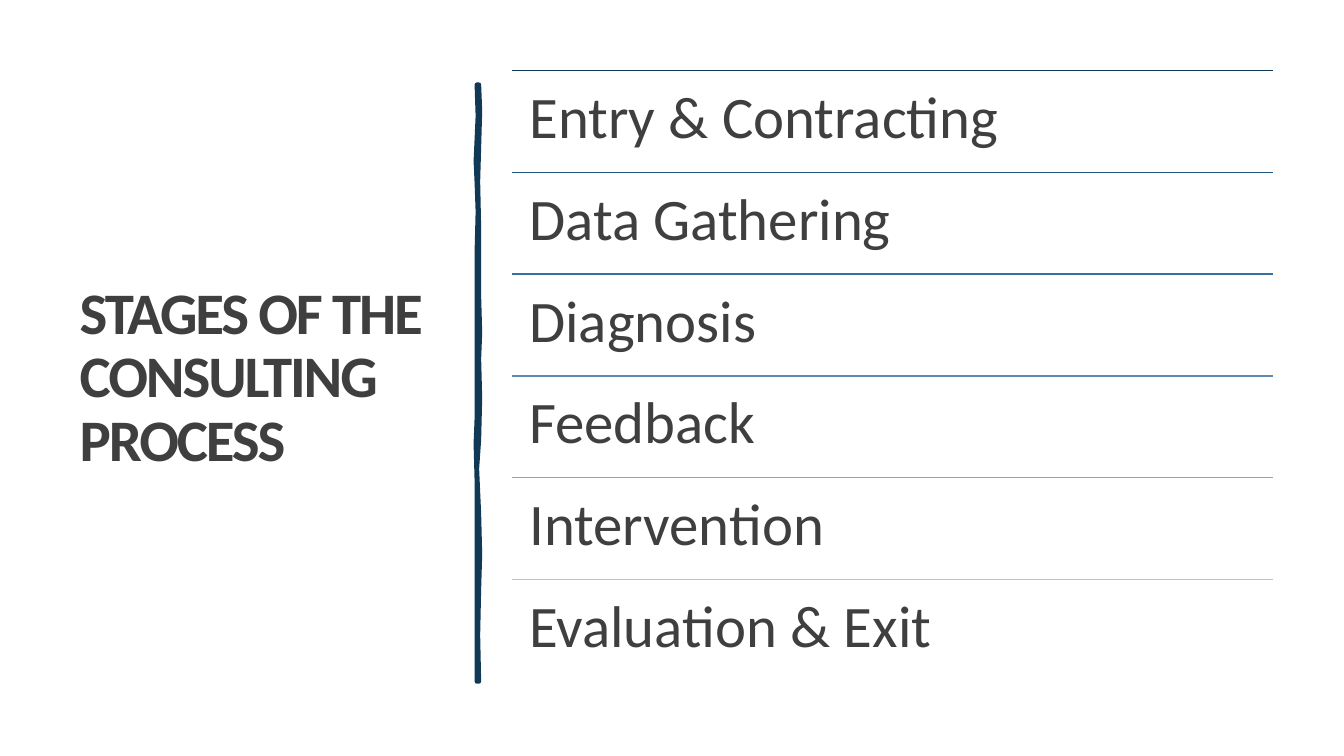
from dataclasses import dataclass

from lxml import etree
from pptx import Presentation
from pptx.dml.color import RGBColor
from pptx.enum import shapes, text
from pptx.oxml.ns import qn
from pptx.util import Inches, Pt

TITLE = "STAGES OF THE CONSULTING PROCESS"
STAGES = [
    ("Entry & Contracting", "0F3955"),
    ("Data Gathering", "20567E"),
    ("Diagnosis", "3870A1"),
    ("Feedback", "5E8AB5"),
    ("Intervention", "90A6BE"),
    ("Evaluation & Exit", "BBC3CD"),
]
BAR_RIGHT = [
    (4.75, 0.84), (4.76, 1.1), (4.75, 1.46), (4.74, 1.8), (4.75, 2.26),
    (4.75, 2.94), (4.76, 3.3), (4.75, 3.56), (4.76, 3.95), (4.75, 4.36),
    (4.73, 4.65), (4.75, 5.1), (4.76, 5.5), (4.75, 5.84), (4.74, 6.3),
    (4.75, 6.76),
]
BAR_LEFT = [
    (4.73, 6.76), (4.73, 6.4), (4.73, 6.13), (4.73, 5.57), (4.73, 4.77),
    (4.72, 4.4), (4.73, 4.15), (4.73, 3.35), (4.73, 2.5), (4.74, 2.1),
    (4.73, 1.81), (4.72, 1.6), (4.74, 1.15), (4.73, 0.84),
]
LIST_LEFT, LIST_TOP, LIST_WIDTH, ROW_HEIGHT = 5.08, 0.7, 7.55, 1.01


@dataclass(frozen=True)
class Theme:
    font: str = "Calibri"
    ink: str = "3F3F3F"
    bar: str = "0F3955"
    size: float = 42
    bar_line: float = 3.25
    rule_line: float = 1
    inset: float = 0.17


THEME = Theme()


def rgb(value):
    return RGBColor.from_string(value)


def write(tf, words, bold=False):
    tf.word_wrap = True
    tf.auto_size = text.MSO_AUTO_SIZE.NONE
    p = tf.paragraphs[0]
    p.alignment = text.PP_ALIGN.LEFT
    p.line_spacing = 0.9
    p.font.name = THEME.font
    p.font.size = Pt(THEME.size)
    p.font.bold = bold
    p.font.color.rgb = rgb(THEME.ink)
    r = p.add_run()
    r.text = words
    return r


def add_title(slide):
    sp = slide.shapes.title
    sp.left, sp.top, sp.width, sp.height = map(Inches, (0.69, 0.7, 3.74, 6.11))
    sp.text_frame.vertical_anchor = text.MSO_ANCHOR.MIDDLE
    r = write(sp.text_frame, TITLE, bold=True)
    r._r.get_or_add_rPr().set("spc", "-150")


def add_bar(slide):
    start, *rest = [(Inches(x), Inches(y)) for x, y in BAR_RIGHT + BAR_LEFT]
    builder = slide.shapes.build_freeform(*start)
    builder.add_line_segments(rest, close=True)
    sp = builder.convert_to_shape()
    sp.shadow.inherit = False
    sp.fill.solid()
    sp.fill.fore_color.rgb = rgb(THEME.bar)
    sp.line.color.rgb = rgb(THEME.bar)
    sp.line.width = Pt(THEME.bar_line)
    etree.SubElement(sp.line._get_or_add_ln(), qn("a:round"))


def add_stage(slide, index, name, color):
    left, width, height = map(Inches, (LIST_LEFT, LIST_WIDTH, ROW_HEIGHT))
    top = Inches(LIST_TOP + index * ROW_HEIGHT)
    rule = slide.shapes.add_connector(
        shapes.MSO_CONNECTOR.STRAIGHT, left, top, left + width, top)
    rule.line.color.rgb = rgb(color)
    rule.line.width = Pt(THEME.rule_line)
    etree.SubElement(rule._element.spPr, qn("a:effectLst"))
    tf = slide.shapes.add_textbox(left, top, width, height).text_frame
    tf.margin_left = tf.margin_right = Inches(THEME.inset)
    tf.margin_top = tf.margin_bottom = Inches(THEME.inset)
    write(tf, name)


def main():
    """Build the slide of consulting stages and save it."""
    prs = Presentation()
    prs.slide_width, prs.slide_height = Inches(13.33), Inches(7.5)
    slide = prs.slides.add_slide(prs.slide_layouts[5])
    add_title(slide)
    add_bar(slide)
    for index, (name, color) in enumerate(STAGES):
        add_stage(slide, index, name, color)
    prs.save("out.pptx")


if __name__ == "__main__":
    main()
